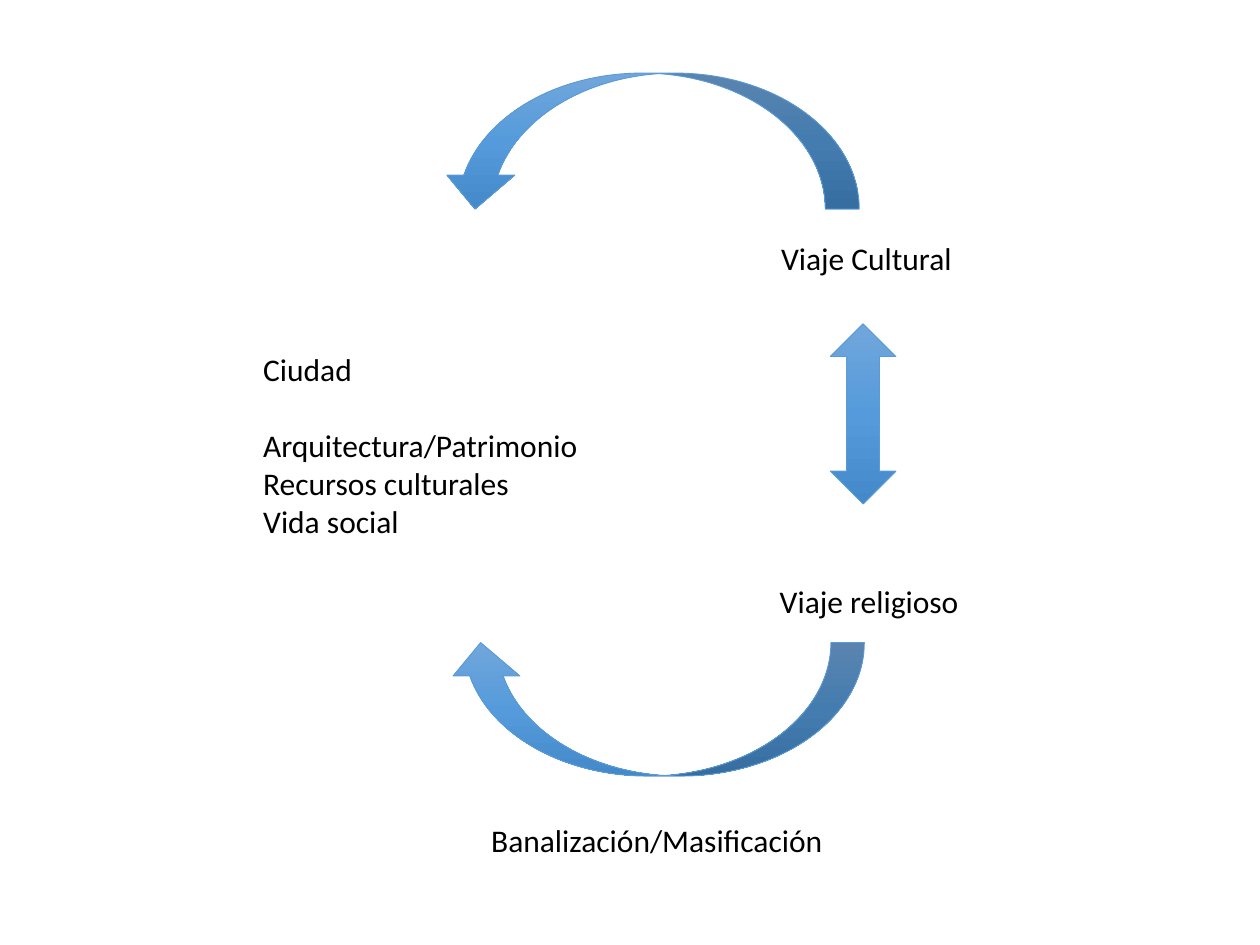
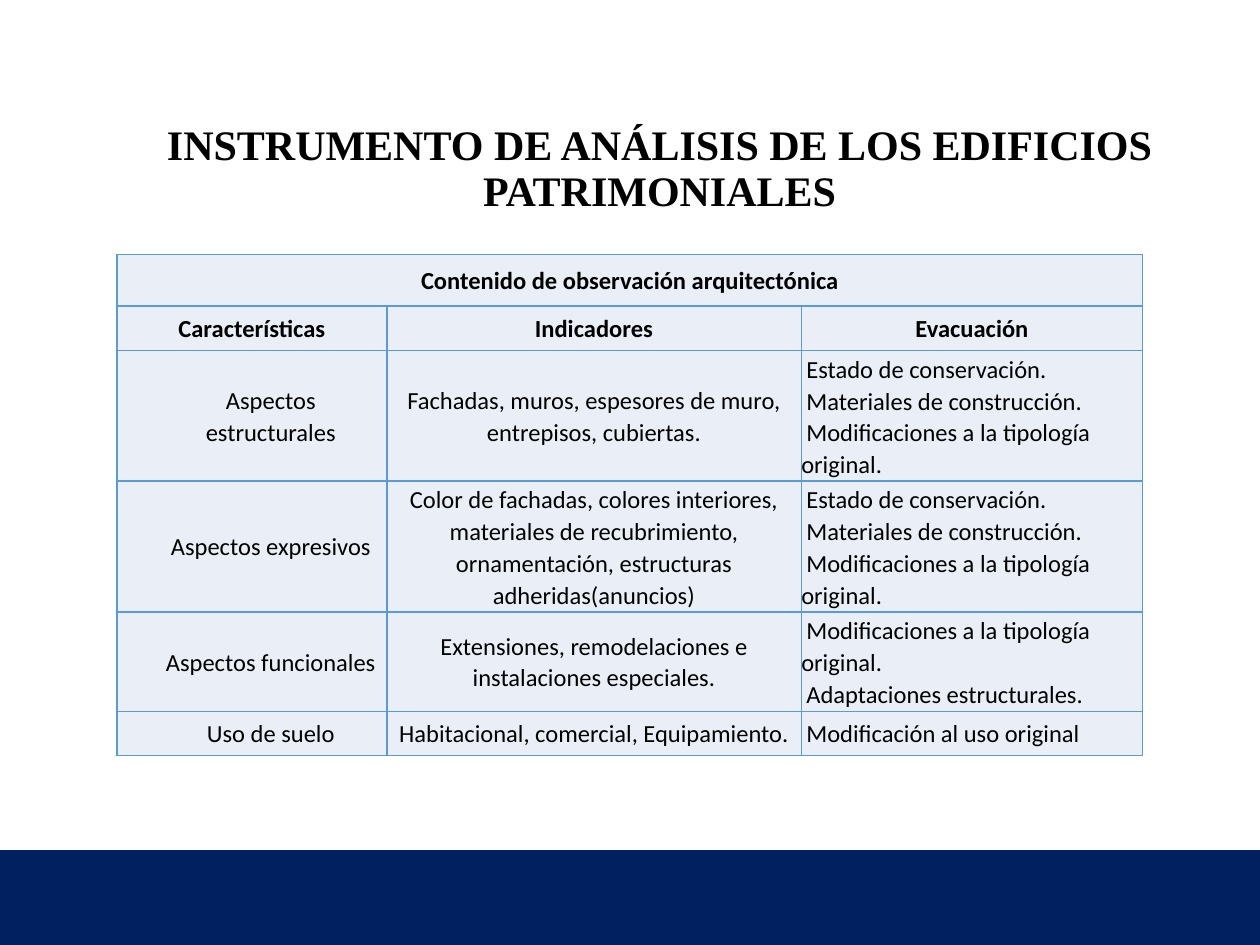
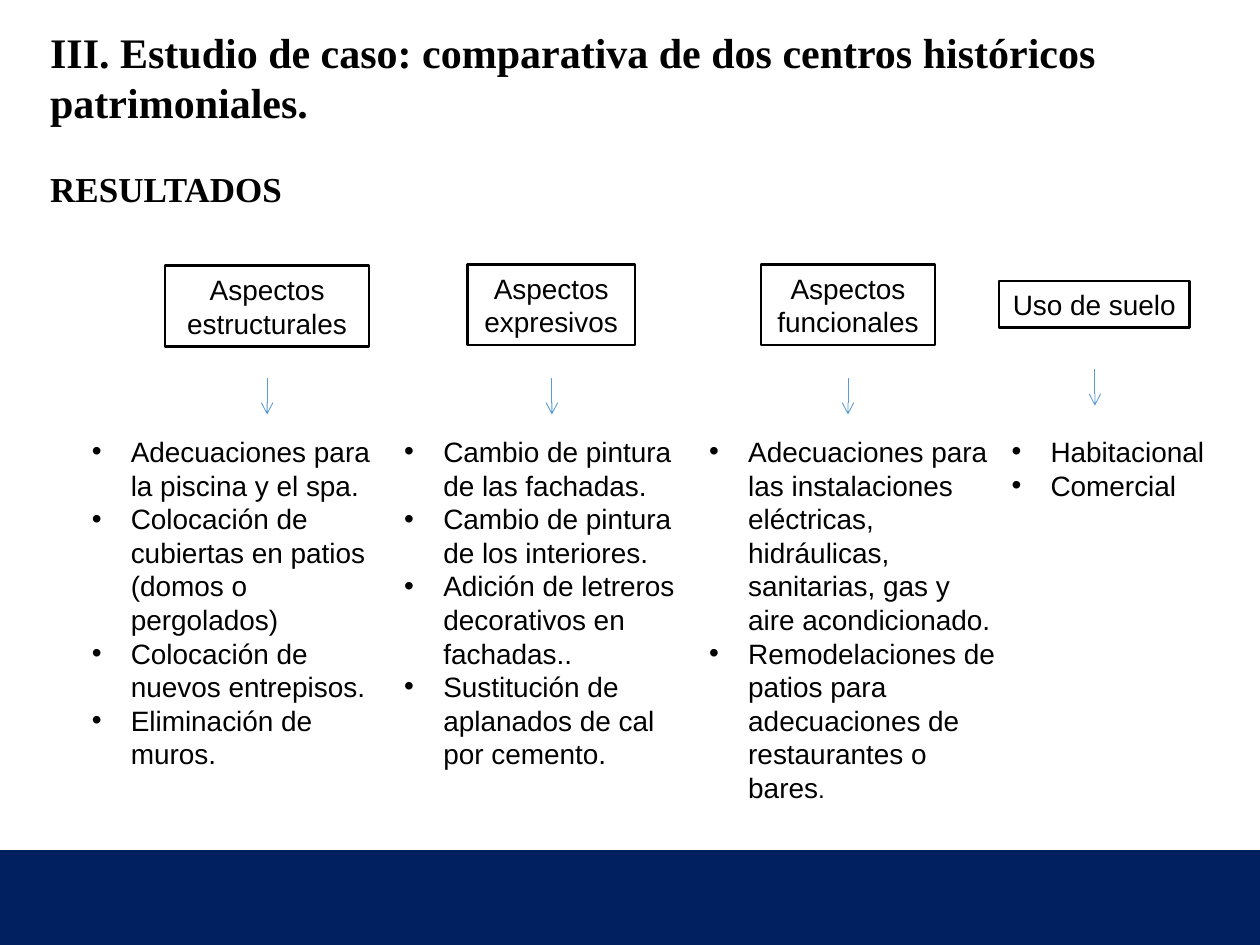
from copy import deepcopy

from lxml.etree import SubElement
from pptx import Presentation
from pptx.dml.color import RGBColor
from pptx.enum.shapes import MSO_CONNECTOR as CONN, MSO_SHAPE as SHAPE
from pptx.enum.text import MSO_ANCHOR as ANCHOR, PP_ALIGN as ALIGN
from pptx.oxml.ns import qn
from pptx.util import Inches, Pt

COLORS = {
    "text": "000000", "navy": "002060", "blue": "5B9BD5", "cell": "EAEFF7",
    "grad_top": "71A6DB", "grad_mid": "559BDB", "grad_end": "448ACA",
}
BODY = {"name": "Calibri", "size": Pt(18)}
CELL = {"name": "Calibri", "size": Pt(14)}
TITLE = {"name": "Times New Roman", "size": Pt(24), "bold": True}
SUBTITLE = {**TITLE, "size": Pt(20)}
LIST = {"name": "Arial", "size": Pt(16)}

CYCLE_ARROWS = [
    (SHAPE.CURVED_DOWN_ARROW, (3.5, 0.58, 3.32, 1.08), True),
    (SHAPE.CURVED_UP_ARROW, (3.55, 5.1, 3.31, 1.06), True),
    (SHAPE.UP_DOWN_ARROW, (6.59, 2.57, 0.52, 1.43), False),
]
CYCLE_LABELS = [
    ("Viaje Cultural", (6.1, 1.85, 1.58, 0.4)),
    ("Viaje religioso", (6.09, 4.57, 1.64, 0.4)),
    ("Banalización/Masificación", (3.8, 6.47, 2.86, 0.4)),
]
CONDITION = ["Estado de conservación.", "Materiales de construcción.",
             "Modificaciones a la tipología original."]
COL_WIDTHS = [2.14, 3.29, 2.71]
ROW_HEIGHTS = [0.41, 0.35, 0.81, 0.84, 0.55, 0.35]
TABLE_ROWS = [
    ["Contenido de observación arquitectónica", "", ""],
    ["Características", "Indicadores", "Evacuación"],
    ["Aspectos estructurales",
     "Fachadas, muros, espesores de muro, entrepisos, cubiertas.", CONDITION],
    ["Aspectos expresivos",
     "Color de fachadas, colores interiores, materiales de recubrimiento, "
     "ornamentación, estructuras adheridas(anuncios)", CONDITION],
    ["Aspectos funcionales",
     "Extensiones, remodelaciones e instalaciones especiales.",
     ["Modificaciones a la tipología original.", "Adaptaciones estructurales."]],
    ["Uso de suelo", "Habitacional, comercial, Equipamiento.",
     ["Modificación al uso original"]],
]
RESULTS = [
    ("Aspectos estructurales", (1.31, 2.11, 1.62, 0.64), (2.12, 3), (0.63, 3.4, 2.59, 3.06),
     ["Adecuaciones para la piscina y el spa.",
      "Colocación de cubiertas en patios (domos o pergolados)",
      "Colocación de nuevos entrepisos.", "Eliminación de muros."]),
    ("Aspectos expresivos", (3.71, 2.1, 1.33, 0.64), (4.38, 3), (3.11, 3.4, 2.42, 3.06),
     ["Cambio de pintura de las fachadas.", "Cambio de pintura de los interiores.",
      "Adición de letreros decorativos en fachadas..",
      "Sustitución de aplanados de cal por cemento."]),
    ("Aspectos funcionales", (6.04, 2.1, 1.38, 0.64), (6.73, 3), (5.53, 3.4, 2.48, 3.06),
     ["Adecuaciones para las instalaciones eléctricas, hidráulicas, sanitarias, "
      "gas y aire acondicionado.",
      "Remodelaciones de patios para adecuaciones de restaurantes o bares"]),
    ("Uso de suelo", (7.93, 2.23, 1.51, 0.37), (8.69, 2.93), (7.93, 3.4, 2.23, 0.91),
     ["Habitacional", "Comercial"]),
]


def rgb(name):
    return RGBColor.from_string(COLORS[name])


def inches(values):
    return [Inches(v) for v in values]


def add_run(p, text, font):
    r = p.add_run()
    r.text = text
    for key, value in font.items():
        setattr(r.font, key, value)
    r.font.color.rgb = rgb("text")


def write(tf, texts, font, margin=0, indent=0, bullet=False, **fmt):
    for i, text in enumerate(texts):
        p = tf.paragraphs[0] if i == 0 else tf.add_paragraph()
        pPr = p._p.get_or_add_pPr()
        pPr.set("marL", str(Inches(margin)))
        pPr.set("indent", str(Inches(indent)))
        if bullet:
            SubElement(pPr, qn("a:buFont")).set("typeface", "Arial")
            SubElement(pPr, qn("a:buChar")).set("char", "•")
        for key, value in fmt.items():
            setattr(p, key, value)
        add_run(p, text, font)
    return tf


def add_text(s, box, texts, font, wrap=True, **fmt):
    tf = s.shapes.add_textbox(*inches(box)).text_frame
    tf.word_wrap = wrap
    return write(tf, texts, font, **fmt)


def add_shape(s, kind, box, line, width):
    sp = s.shapes.add_shape(kind, *inches(box))
    sp.shadow.inherit = False
    sp.line.color.rgb = rgb(line)
    sp.line.width = Pt(width)
    return sp


def add_block_arrow(s, kind, box, flip):
    sp = add_shape(s, kind, box, "blue", 0.5)
    sp.fill.gradient()
    sp.fill.gradient_angle = 270
    first = sp._element.spPr.find(".//" + qn("a:gs"))
    first.addnext(deepcopy(first))
    stops = zip(sp.fill.gradient_stops, (0, 0.5, 1), ("grad_top", "grad_mid", "grad_end"))
    for stop, position, color in stops:
        stop.position = position
        stop.color.rgb = rgb(color)
    if flip:
        sp._element.spPr.find(qn("a:xfrm")).set("flipH", "1")


def add_label_box(s, box, text):
    sp = add_shape(s, SHAPE.RECTANGLE, box, "text", 1.5)
    sp.fill.background()
    sp.text_frame.word_wrap = box[3] > 0.5
    write(sp.text_frame, [text], LIST, alignment=ALIGN.CENTER)


def add_down_arrow(s, x, y):
    c = s.shapes.add_connector(CONN.STRAIGHT, *inches((x, y, x, y + 0.29)))
    c.line.color.rgb = rgb("blue")
    c.line.width = Pt(0.5)
    SubElement(c.line._get_or_add_ln(), qn("a:tailEnd")).set("type", "arrow")
    SubElement(c._element.spPr, qn("a:effectLst"))


def add_footer_band(s):
    band = add_shape(s, SHAPE.RECTANGLE, (0, 6.75, 10, 0.75), "navy", 1)
    band.fill.solid()
    band.fill.fore_color.rgb = rgb("navy")


def style_cell(cell, side):
    tcPr = cell._tc.get_or_add_tcPr()
    for edge in ("a:lnL", "a:lnR", "a:lnT", "a:lnB"):
        ln = SubElement(tcPr, qn(edge), w=str(Pt(1)))
        fill = SubElement(ln, qn("a:solidFill"))
        SubElement(fill, qn("a:srgbClr")).set("val", COLORS["blue"])
    cell.fill.solid()
    cell.fill.fore_color.rgb = rgb("cell")
    cell.vertical_anchor = ANCHOR.MIDDLE
    cell.margin_left = cell.margin_right = Inches(side)
    cell.margin_top = cell.margin_bottom = Inches(0.02)


def add_observation_table(s):
    box = (0.93, 2.02, sum(COL_WIDTHS), sum(ROW_HEIGHTS))
    shape = s.shapes.add_table(len(ROW_HEIGHTS), len(COL_WIDTHS), *inches(box))
    table = shape.table
    table.first_row = table.horz_banding = False
    for column, width in zip(table.columns, COL_WIDTHS):
        column.width = Inches(width)
    for i, (height, row) in enumerate(zip(ROW_HEIGHTS, TABLE_ROWS)):
        table.rows[i].height = Inches(height)
        for j, content in enumerate(row):
            cell = table.cell(i, j)
            style_cell(cell, 0.08 if j == 0 else 0)
            if not content:
                continue
            is_list = isinstance(content, list)
            write(cell.text_frame, content if is_list else [content],
                  {**CELL, "bold": i < 2},
                  margin=0.3 if i > 1 and j == 0 else 0,
                  indent=0.04 if is_list else 0,
                  alignment=ALIGN.LEFT if is_list else ALIGN.CENTER,
                  line_spacing=1.07)
    table.cell(0, 0).merge(table.cell(0, len(COL_WIDTHS) - 1))


def build_cycle(s):
    tf = add_text(s, (1.99, 2.73, 3.09, 1.62),
                  ["Ciudad", "Arquitectura/Patrimonio", "Recursos culturales", "Vida social"],
                  BODY)
    tf.paragraphs[1].space_before = Pt(22)
    for text, box in CYCLE_LABELS:
        add_text(s, box, [text], BODY, wrap=False)
    for kind, box, flip in CYCLE_ARROWS:
        add_block_arrow(s, kind, box, flip)


def build_instrument(s):
    add_text(s, (0.35, 0.94, 9.77, 1.08),
             ["INSTRUMENTO DE ANÁLISIS DE LOS EDIFICIOS PATRIMONIALES"], TITLE,
             alignment=ALIGN.CENTER, line_spacing=0.9)
    add_observation_table(s)
    add_footer_band(s)


def build_results(s):
    add_footer_band(s)
    for label, label_box, arrow, list_box, items in RESULTS:
        add_label_box(s, label_box, label)
        add_down_arrow(s, *arrow)
        tf = add_text(s, list_box, items, LIST, margin=0.31, indent=-0.31, bullet=True)
        if label == "Aspectos funcionales":
            add_run(tf.paragraphs[-1], ".", {**LIST, "size": Pt(14)})
    tf = add_text(s, (0.3, 0.16, 9.2, 3.84),
                  ["III. Estudio de caso: comparativa de dos centros históricos patrimoniales."],
                  TITLE)
    p = tf.add_paragraph()
    p.space_before = Pt(23)
    add_run(p, "RESULTADOS", SUBTITLE)


def main():
    prs = Presentation()
    prs.slide_width, prs.slide_height = inches((10, 7.5))
    for build in (build_cycle, build_instrument, build_results):
        build(prs.slides.add_slide(prs.slide_layouts[6]))
    prs.save("out.pptx")


if __name__ == "__main__":
    main()
